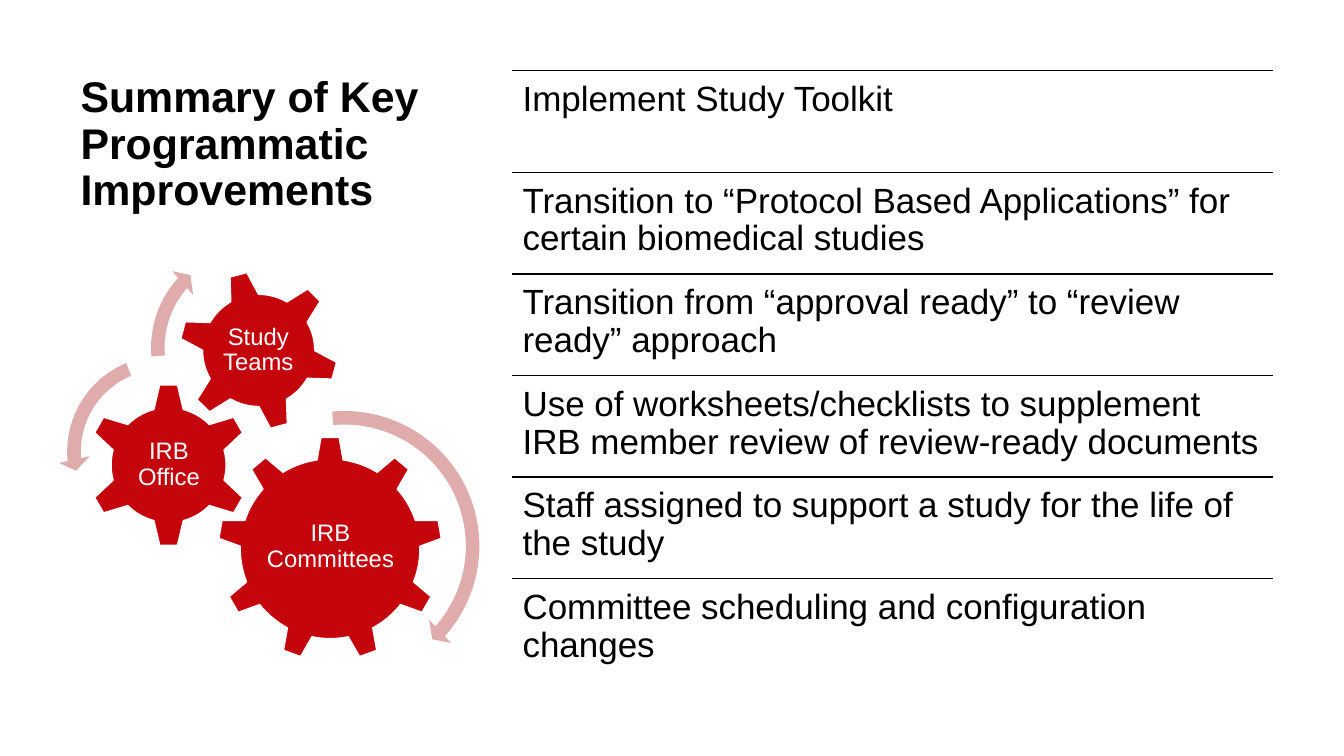
from lxml import etree
from pptx import Presentation
from pptx import util as u
from pptx.dml.color import RGBColor
from pptx.enum import shapes, text
from pptx.oxml import ns

Kind = shapes.MSO_SHAPE
Anchor = text.MSO_ANCHOR
Align = text.PP_ALIGN


def color(hex_code):
    return RGBColor.from_string(hex_code)


def write(frame, words, size, ink="000000", bold=False, align=Align.LEFT,
          anchor=Anchor.TOP, inset=(0.27, 0.27)):
    frame.word_wrap = True
    frame.vertical_anchor = anchor
    frame.margin_left = frame.margin_right = u.Cm(inset[0])
    frame.margin_top = frame.margin_bottom = u.Cm(inset[1])
    paragraph = frame.paragraphs[0]
    paragraph.text = words
    paragraph.alignment = align
    paragraph.line_spacing = 0.9
    paragraph.font.name = "Arial"
    paragraph.font.size = u.Pt(size)
    paragraph.font.bold = bold
    paragraph.font.color.rgb = color(ink)


class Deck:
    ink = "000000"
    paper = "FFFFFF"
    gear_red = "C5050C"
    arrow_pink = "DFABAB"

    def __init__(self):
        self.file = Presentation()
        self.file.slide_width = u.Cm(33.87)
        self.file.slide_height = u.Cm(19.05)
        self.slide = self.file.slides.add_slide(self.file.slide_layouts[6])

    def label(self, box, words, size, **style):
        area = self.slide.shapes.add_textbox(*map(u.Cm, box))
        write(area.text_frame, words, size, **style)

    def rule(self, left, right, top):
        divider = self.slide.shapes.add_connector(
            shapes.MSO_CONNECTOR.STRAIGHT, u.Cm(left), u.Cm(top), u.Cm(right), u.Cm(top))
        divider.line.color.rgb = color(self.ink)
        divider.line.width = u.Pt(1)
        etree.SubElement(divider._element.spPr, ns.qn("a:effectLst"))

    def square(self, kind, left, top, side, fill):
        figure = self.slide.shapes.add_shape(
            kind, u.Cm(left), u.Cm(top), u.Cm(side), u.Cm(side))
        figure.shadow.inherit = False
        figure.fill.solid()
        figure.fill.fore_color.rgb = color(fill)
        return figure

    def gear(self, kind, left, top, side, turn, words, box):
        wheel = self.square(kind, left, top, side, self.gear_red)
        wheel.rotation = turn
        wheel.line.color.rgb = color(self.paper)
        wheel.line.width = u.Pt(1)
        self.label(box, words, 17, ink=self.paper, align=Align.CENTER,
                   anchor=Anchor.MIDDLE, inset=(0.05, 0.05))

    def arc(self, kind, left, top, side, band, head, degrees):
        arrow = self.square(kind, left, top, side, self.arrow_pink)
        arrow.line.fill.background()
        angles = [angle * 60000 / 100000 for angle in degrees]
        for index, value in enumerate([band / 100, *angles, head / 100]):
            arrow.adjustments[index] = value


IMPROVEMENTS = [
    "Implement Study Toolkit",
    "Transition to “Protocol Based Applications” for certain biomedical studies",
    "Transition from “approval ready” to “review ready” approach",
    "Use of worksheets/checklists to supplement IRB member review of review-ready documents",
    "Staff assigned to support a study for the life of the study",
    "Committee scheduling and configuration changes",
]

GEARS = [
    (Kind.GEAR_9, 5.49, 11, 5.66, 0, "IRB Committees", (6.63, 12.32, 3.4, 2.92)),
    (Kind.GEAR_6, 2.18, 9.65, 4.14, 0, "IRB Office", (3.23, 10.69, 2.06, 2.03)),
    (Kind.GEAR_6, 4.5, 6.81, 4.04, 345, "Study Teams", (5.38, 7.7, 2.26, 2.26)),
]

ARROWS = [
    (Kind.CIRCULAR_ARROW, 5.05, 10.13, 7.26, 4.7, 5.5, (4.98, 41.73, 264.81)),
    (Kind.LEFT_CIRCULAR_ARROW, 1.47, 8.74, 5.28, 6.5, 7.5, (7.17, 174.82, 247.3)),
    (Kind.CIRCULAR_ARROW, 3.58, 5.92, 5.69, 6, 7, (6.57, 221.9, 175.14)),
]

LIST_LEFT, LIST_RIGHT, LIST_TOP, ROW_HEIGHT = 12.9, 32.08, 1.78, 2.56


def main():
    deck = Deck()
    deck.label((1.78, 1.4, 9.5, 4.52), "Summary of Key Programmatic Improvements", 30.6,
               bold=True, anchor=Anchor.MIDDLE, inset=(0.25, 0.13))
    for row, improvement in enumerate(IMPROVEMENTS):
        top = LIST_TOP + row * ROW_HEIGHT
        deck.rule(LIST_LEFT, LIST_RIGHT, top)
        deck.label((LIST_LEFT, top, LIST_RIGHT - LIST_LEFT, ROW_HEIGHT), improvement, 25)
    for gear in GEARS:
        deck.gear(*gear)
    for arrow in ARROWS:
        deck.arc(*arrow)
    deck.file.save("out.pptx")


if __name__ == "__main__":
    main()
